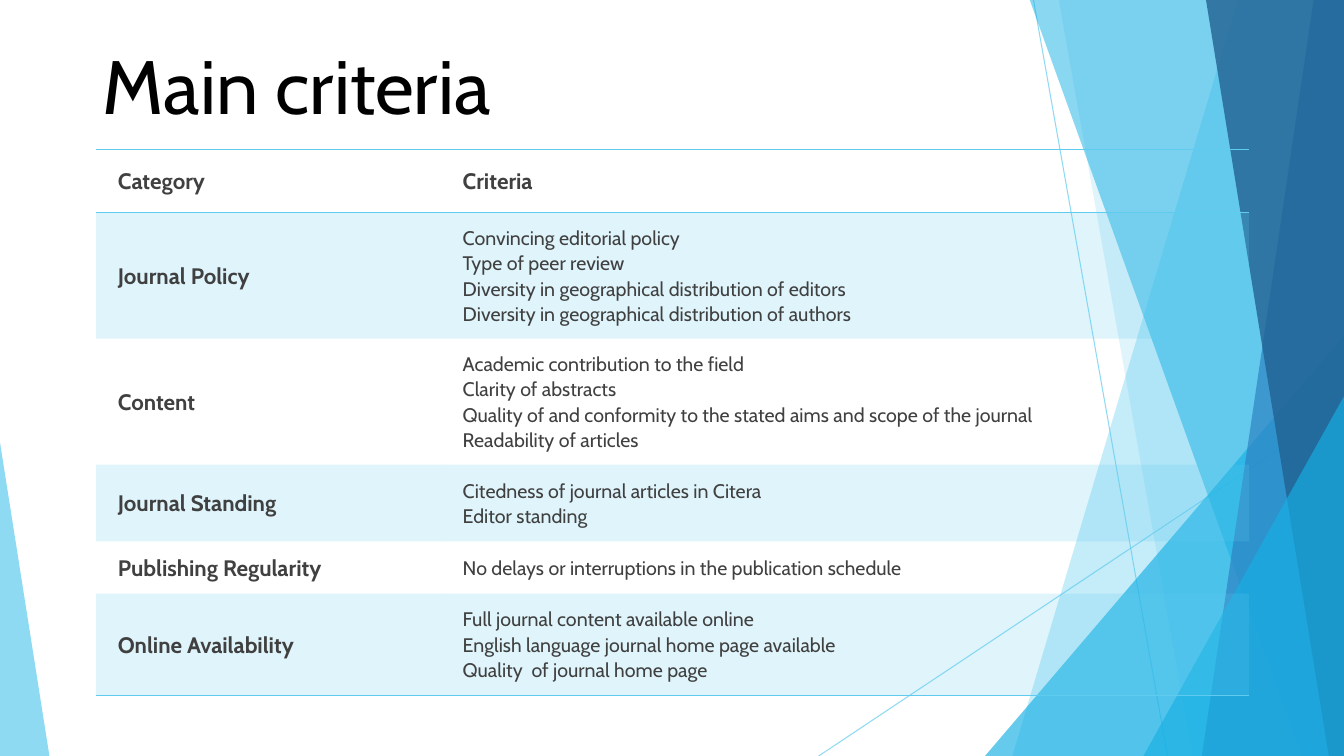
"""Build the "Main criteria" slide: a banded table over translucent facets."""
import pptx
import pptx.util
import pptx.dml.color
import pptx.enum.shapes
import pptx.enum.text
import pptx.oxml.ns
from lxml import etree

Inches, Pt = pptx.util.Inches, pptx.util.Pt
qn = pptx.oxml.ns.qn
RGB = pptx.dml.color.RGBColor.from_string
Shape = pptx.enum.shapes.MSO_SHAPE
Anchor = pptx.enum.text.MSO_ANCHOR

theme = {
    "font": "Cabin", "ink": "000000", "text": "404040",
    "sky": "5FCBEF", "cyan": "17B0E4", "blue": "2E83C3", "navy": "226292",
    "title": 54, "head": 16, "body": 14,
}
wide, high = 13.33, 7.5


def fade(node, percent):
    for tone in node.iter(qn("a:srgbClr")):
        etree.SubElement(tone, qn("a:alpha"), val=str(percent * 1000))


def style(para, size, bold, color):
    for run in para.runs:
        form = {"name": theme["font"], "size": Pt(size), "bold": bold}
        for key, value in form.items():
            setattr(run.font, key, value)
        run.font.color.rgb = RGB(theme[color])


deck = pptx.Presentation()
deck.slide_width, deck.slide_height = Inches(wide), Inches(high)
slide = deck.slides.add_slide(deck.slide_layouts[5])
shapes = slide.shapes

for ends in [(10.25, 0, 11.58, high), (wide, 4.03, 8.12, high)]:
    line = shapes.add_connector(
        pptx.enum.shapes.MSO_CONNECTOR.STRAIGHT, *map(Inches, ends))
    line.line.width = Pt(0.75)
    line.line.color.rgb = RGB(theme["sky"])
    fade(line.element.spPr, 70)
    etree.SubElement(line.element.spPr, qn("a:effectLst"))

facets = [
    ("band", (12.28, 10.04), "sky", 36),
    ("band", (10.5, 11.83), "sky", 20),
    ("right", (9.77, 3.33, 3.56, 4.17), "cyan", 66),
    ("band", (10.21, 12.91), "cyan", 50),
    ("band", (13.03, 11.92), "blue", 70),
    ("band", (11.96, 13.18), "navy", 80),
    ("right", (11.34, 3.93, 1.99, 3.57), "cyan", 66),
    ("left", (0, 4.39, 0.49, 3.11), "sky", 70),
]
for kind, place, color, alpha in facets:
    if kind == "band":
        top, base = place
        pen = shapes.build_freeform(Inches(top), Inches(-0.01))
        corners = [(wide, -0.01), (wide, high), (base, high)]
        pen.add_line_segments([(Inches(x), Inches(y)) for x, y in corners])
        facet = pen.convert_to_shape()
    else:
        facet = shapes.add_shape(Shape.ISOSCELES_TRIANGLE, *map(Inches, place))
        facet.adjustments[0] = 1 if kind == "right" else 0
    facet.shadow.inherit = False
    facet.line.fill.background()
    facet.fill.solid()
    facet.fill.fore_color.rgb = RGB(theme[color])
    fade(facet.element.spPr, alpha)

title = shapes.title
shapes.element.append(title.element)
box = {"left": 0.92, "top": 0.32, "width": 11.5, "height": 1.02}
for key, value in box.items():
    setattr(title, key, Inches(value))
title.text_frame.text = "Main criteria"
title.text_frame.vertical_anchor = Anchor.BOTTOM
title.text_frame.auto_size = pptx.enum.text.MSO_AUTO_SIZE.NONE
title.text_frame.paragraphs[0].alignment = pptx.enum.text.PP_ALIGN.LEFT
style(title.text_frame.paragraphs[0], theme["title"], False, "ink")

rows = [
    (0.63, "Category", ["Criteria"]),
    (1.25, "Journal Policy", [
        "Convincing editorial policy",
        "Type of peer review",
        "Diversity in geographical distribution of editors",
        "Diversity in geographical distribution of authors"]),
    (1.25, "Content", [
        "Academic contribution to the field",
        "Clarity of abstracts",
        "Quality of and conformity to the stated aims and scope of the journal",
        "Readability of articles"]),
    (0.76, "Journal Standing", [
        "Citedness of journal articles in Citera",
        "Editor standing"]),
    (0.52, "Publishing Regularity", [
        "No delays or interruptions in the publication schedule"]),
    (1.01, "Online Availability", [
        "Full journal content available online",
        "English language journal home page available",
        "Quality  of journal home page"]),
]
last = len(rows) - 1
frame = shapes.add_table(
    len(rows), 2, Inches(0.95), Inches(1.48), Inches(11.44), Inches(5.42))
table = frame.table
table.first_row = table.horz_banding = False
for mark in frame.element.iter(qn("a:tableStyleId")):
    mark.text = "{2D5ABB26-0587-4C30-8999-92F81FD0307C}"
for column, width in zip(table.columns, (3.42, 8.02)):
    column.width = Inches(width)

nodes = frame.element.iter(qn("a:tc"))
for r, (height, name, items) in enumerate(rows):
    table.rows[r].height = Inches(height)
    pad = Inches(0.11 if r else 0.13)
    for c, text in enumerate((name, "\n".join(items))):
        cell, node = table.cell(r, c), next(nodes)
        form = {"margin_left": Inches(0.22), "margin_right": pad,
                "margin_top": pad, "margin_bottom": pad,
                "vertical_anchor": Anchor.MIDDLE}
        for key, value in form.items():
            setattr(cell, key, value)
        para = cell.text_frame.paragraphs[0]
        para.text = text
        para.line_spacing, para.space_after = 1.07, Pt(8)
        bold = r == 0 or c == 0
        style(para, theme["head" if bold else "body"], bold, "text")
        props = node.find(qn("a:tcPr"))
        if r % 2:
            cell.fill.solid()
            cell.fill.fore_color.rgb = RGB(theme["sky"])
            fade(props, 20)
        else:
            cell.fill.background()
        sides = {0: ["a:lnT", "a:lnB"], last: ["a:lnB"]}.get(r, [])
        for spot, side in enumerate(sides):
            edge = etree.Element(qn(side), w=str(Pt(1)))
            paint = etree.SubElement(edge, qn("a:solidFill"))
            etree.SubElement(paint, qn("a:srgbClr"), val=theme["sky"])
            props.insert(spot, edge)
for gap in frame.element.iter(qn("a:br")):
    etree.SubElement(gap, qn("a:rPr"), sz=str(theme["body"] * 100))

deck.save("out.pptx")
